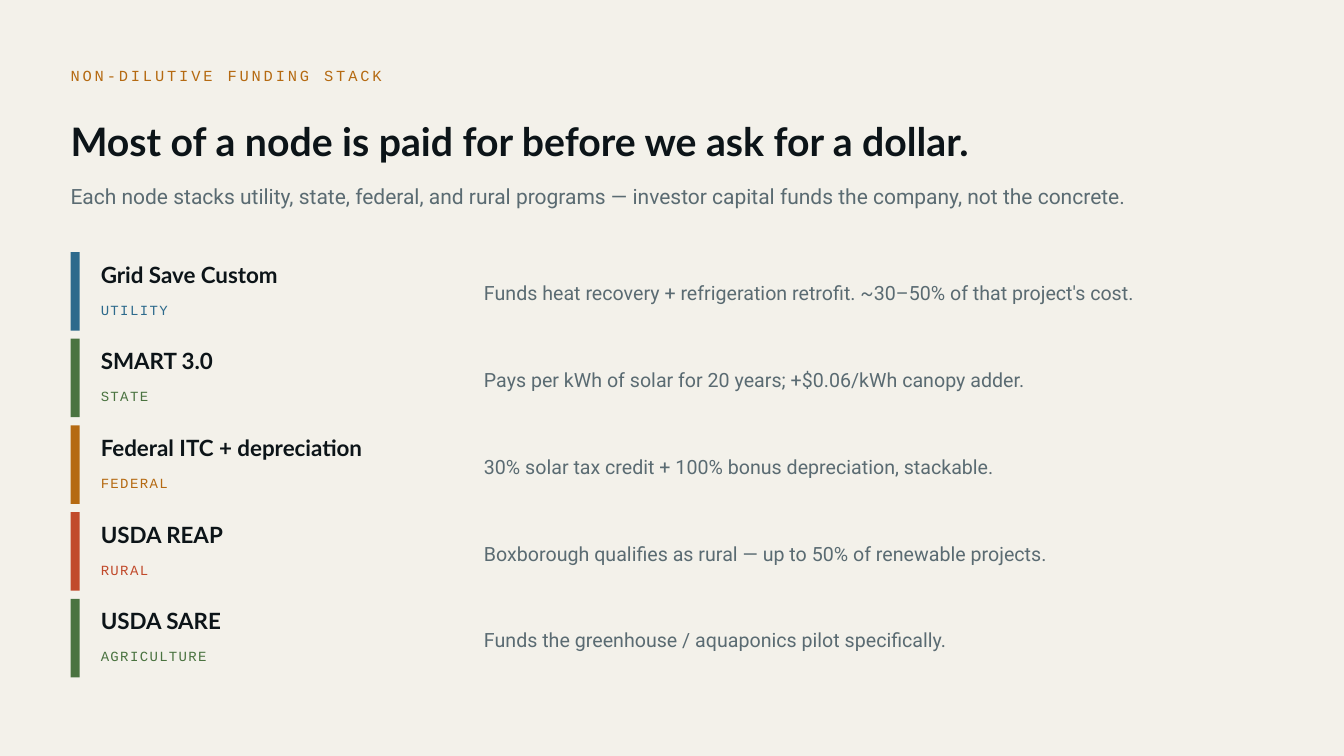
from pptx import Presentation
from pptx.dml.color import RGBColor
from pptx.enum.shapes import MSO_SHAPE
from pptx.enum.text import MSO_ANCHOR, MSO_AUTO_SIZE, PP_ALIGN
from pptx.util import Emu, Pt

RECTANGLE = MSO_SHAPE.RECTANGLE
MIDDLE = MSO_ANCHOR.MIDDLE
NO_AUTOFIT = MSO_AUTO_SIZE.NONE
LEFT = PP_ALIGN.LEFT

CREAM = RGBColor(0xF3, 0xF1, 0xEA)
INK = RGBColor(0x0C, 0x14, 0x18)
SLATE = RGBColor(0x5A, 0x6B, 0x72)
BLUE = RGBColor(0x2D, 0x6A, 0x8C)
GREEN = RGBColor(0x4A, 0x73, 0x40)
AMBER = RGBColor(0xB5, 0x6A, 0x12)
RED = RGBColor(0xC1, 0x4A, 0x2B)

HEADING_FONT, BODY_FONT, LABEL_FONT = "Lato", "Roboto", "Courier New"

# Content
EYEBROW = "NON-DILUTIVE FUNDING STACK"
TITLE = "Most of a node is paid for before we ask for a dollar."
SUBTITLE = ("Each node stacks utility, state, federal, and rural programs — "
            "investor capital funds the company, not the concrete.")
PROGRAMS = [
    ("Grid Save Custom", "UTILITY", BLUE,
     "Funds heat recovery + refrigeration retrofit. ~30–50% of that project's cost."),
    ("SMART 3.0", "STATE", GREEN,
     "Pays per kWh of solar for 20 years; +$0.06/kWh canopy adder."),
    ("Federal ITC + depreciation", "FEDERAL", AMBER,
     "30% solar tax credit + 100% bonus depreciation, stackable."),
    ("USDA REAP", "RURAL", RED,
     "Boxborough qualifies as rural — up to 50% of renewable projects."),
    ("USDA SARE", "AGRICULTURE", GREEN,
     "Funds the greenhouse / aquaponics pilot specifically."),
]

# Layout in px, 100 px to the inch
EMU_PER_PX = 9144
MARGIN, NAME_LEFT, DETAIL_LEFT = 70, 100, 480
ROWS_TOP, ROW_STEP = 250, 86
BAR_WIDTH, BAR_HEIGHT = 9, 78


def px(*lengths):
    return [Emu(length * EMU_PER_PX) for length in lengths]


def write_text(text, box, *, size, font, color, bold=False, tracking=0,
               line_spacing=None, shape=None):
    """Put one line of text in a new text box, or in the given placeholder."""
    left, top, width, height = px(*box)
    if shape is None:
        shape = slide.shapes.add_textbox(left, top, width, height)
    else:
        shape.left, shape.top, shape.width, shape.height = left, top, width, height
    frame = shape.text_frame
    frame.word_wrap = True
    frame.auto_size = NO_AUTOFIT
    frame.vertical_anchor = MIDDLE
    frame.margin_left = frame.margin_top = frame.margin_right = frame.margin_bottom = 0
    paragraph = frame.paragraphs[0]
    paragraph.alignment = LEFT
    if line_spacing:
        paragraph.line_spacing = Pt(line_spacing)
    run = paragraph.add_run()
    run.text = text
    run.font.size = Pt(size)
    run.font.name = font
    run.font.bold = bold
    run.font.color.rgb = color
    if tracking:
        run.font._element.set("spc", str(tracking * 100))


presentation = Presentation()
presentation.slide_width, presentation.slide_height = px(1333, 750)
slide = presentation.slides.add_slide(presentation.slide_layouts[5])
slide.background.fill.solid()
slide.background.fill.fore_color.rgb = CREAM

# Heading
write_text(EYEBROW, (MARGIN, 60, 500, 30), size=11, font=LABEL_FONT,
           color=AMBER, tracking=2)
write_text(TITLE, (MARGIN, 100, 1200, 80), size=28, font=HEADING_FONT,
           color=INK, bold=True, shape=slide.shapes.title)
write_text(SUBTITLE, (MARGIN, 170, 1200, 50), size=15, font=BODY_FONT, color=SLATE)

# Funding programs
for index, (name, source, color, detail) in enumerate(PROGRAMS):
    top = ROWS_TOP + index * ROW_STEP
    bar = slide.shapes.add_shape(RECTANGLE, *px(MARGIN, top, BAR_WIDTH, BAR_HEIGHT))
    bar.shadow.inherit = False
    bar.fill.solid()
    bar.fill.fore_color.rgb = color
    bar.line.fill.background()
    write_text(name, (NAME_LEFT, top + 2, 360, 40), size=16, font=HEADING_FONT,
               color=INK, bold=True)
    write_text(source, (NAME_LEFT, top + 42, 360, 30), size=10, font=LABEL_FONT,
               color=color, tracking=1)
    write_text(detail, (DETAIL_LEFT, top + 10, 780, 60), size=14, font=BODY_FONT,
               color=SLATE, line_spacing=18)

presentation.save("out.pptx")
